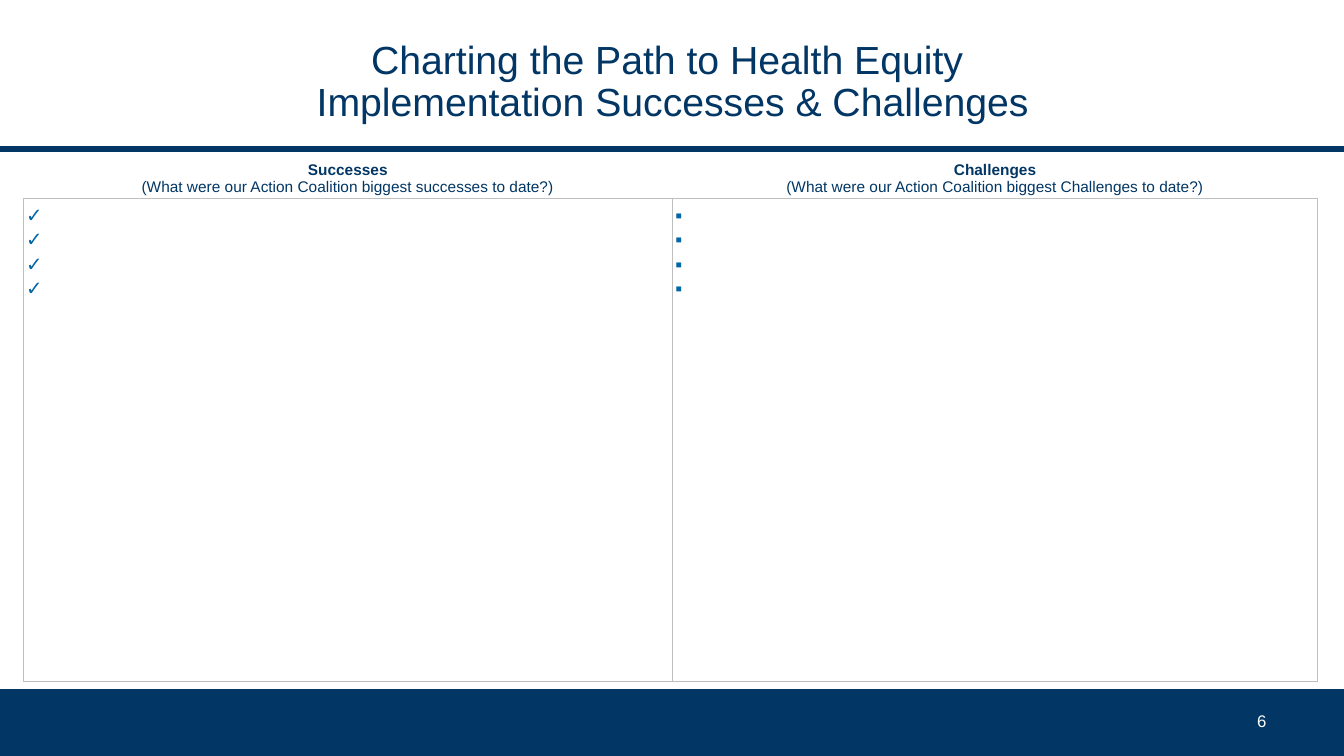
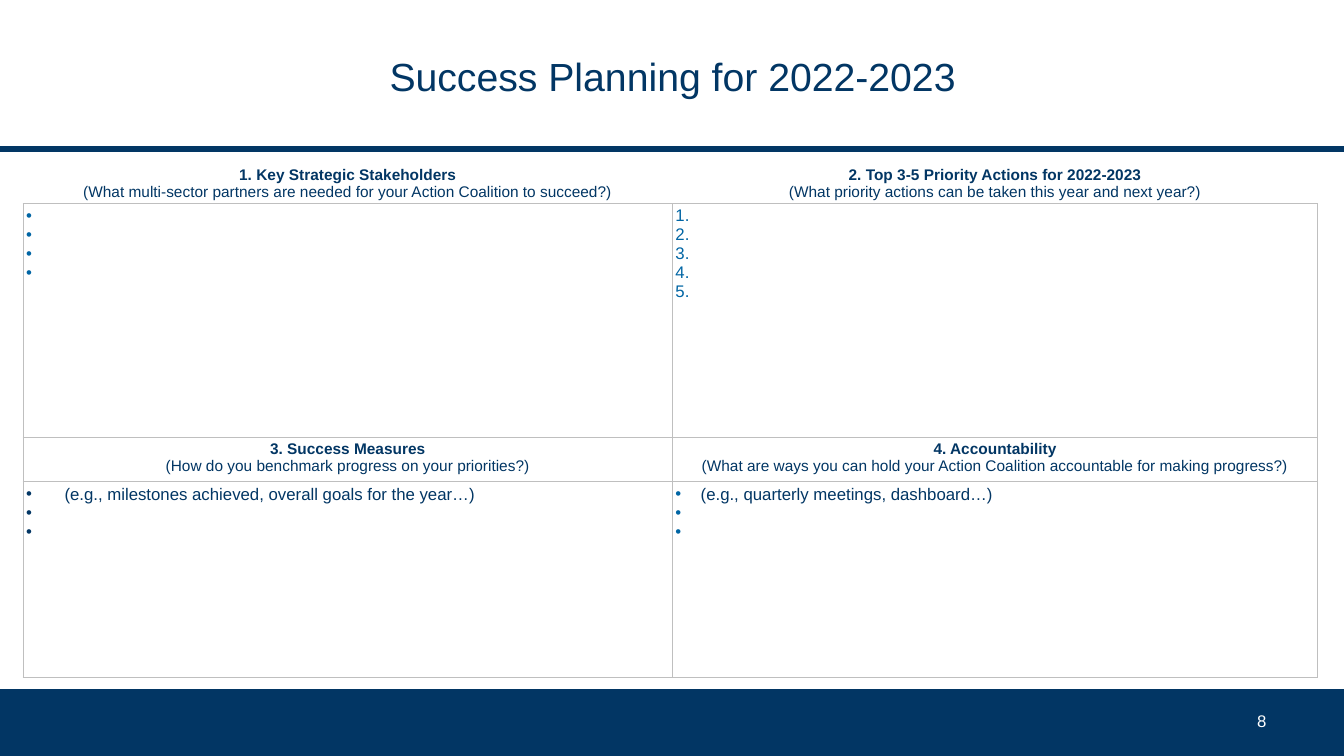
from lxml.etree import SubElement
from pptx import Presentation
from pptx.dml.color import RGBColor
from pptx.enum.shapes import MSO_SHAPE
from pptx.enum.text import MSO_ANCHOR, PP_ALIGN
from pptx.oxml.ns import qn
from pptx.util import Inches, Pt

NAVY = RGBColor(0x02, 0x36, 0x64)
BLUE = RGBColor(0x00, 0x65, 0xA4)
GRAY = RGBColor(0xBF, 0xBF, 0xBF)
WHITE = RGBColor(0xFF, 0xFF, 0xFF)
FONT = "Arial"
WIDTH, HEIGHT = 13.33, 7.5
COLUMNS = (6.44, 6.4)
BLANK = " "  # an entry still to be filled in


class Deck:
    def __init__(self):
        self.prs = Presentation()
        self.prs.slide_width = Inches(WIDTH)
        self.prs.slide_height = Inches(HEIGHT)
        self.s = None

    def slide(self, title, title_top, number):
        self.s = self.prs.slides.add_slide(self.prs.slide_layouts[6])
        self.band(6.84, 0.66)
        self.band(1.46, 0.04)
        self.text(title, 1.9, title_top, 9.54, 1.33, 28, NAVY, PP_ALIGN.CENTER, 0.9)
        self.text(number, 9.55, 6.95, 3.11, 0.4, 12, WHITE, PP_ALIGN.RIGHT)

    def band(self, top, height):
        sp = self.s.shapes.add_shape(MSO_SHAPE.RECTANGLE, 0, Inches(top),
                                     Inches(WIDTH), Inches(height))
        sp.shadow.inherit = False
        sp.fill.solid()
        sp.fill.fore_color.rgb = NAVY
        sp.line.color.rgb = NAVY
        sp.line.width = Pt(1)

    def font(self, p, size, color, bold=False):
        for r in p.runs:
            r.font.name = FONT
            r.font.size = Pt(size)
            r.font.bold = bold
            r.font.color.rgb = color

    def text(self, text, left, top, width, height, size, color, align, spacing=1.0):
        box = self.s.shapes.add_textbox(Inches(left), Inches(top),
                                        Inches(width), Inches(height))
        tf = box.text_frame
        tf.word_wrap = True
        tf.vertical_anchor = MSO_ANCHOR.MIDDLE
        tf.text = text
        p = tf.paragraphs[0]
        p.alignment = align
        p.line_spacing = spacing
        self.font(p, size, color)

    def table(self, top, row_heights):
        shape = self.s.shapes.add_table(len(row_heights), len(COLUMNS),
                                        Inches(0.23), Inches(top),
                                        Inches(sum(COLUMNS)), Inches(sum(row_heights)))
        table = shape.table
        table.first_row = table.horz_banding = False
        for column, width in zip(table.columns, COLUMNS):
            column.width = Inches(width)
        for i, (row, height) in enumerate(zip(table.rows, row_heights)):
            row.height = Inches(height)
            for j, cell in enumerate(row.cells):
                cell.margin_left = cell.margin_right = Inches(0.03)
                cell.margin_top = cell.margin_bottom = Inches(0.03)
                # The top row carries only its bottom border
                self.borders(cell, {"B": 1} if i == 0 else
                             {"L": 0.5 if j else 1, "R": 0.5, "T": 1, "B": 1})
                cell.fill.background()
        return table

    def borders(self, cell, widths):
        tcPr = cell._tc.get_or_add_tcPr()
        for side, width in widths.items():
            ln = SubElement(tcPr, qn(f"a:ln{side}"), w=str(Pt(width)))
            fill = SubElement(ln, qn("a:solidFill"))
            SubElement(fill, qn("a:srgbClr"), val=str(GRAY))

    def heading(self, cell, title, question, anchor=MSO_ANCHOR.BOTTOM):
        cell.vertical_anchor = anchor
        cell.text = f"{title}\n{question}"
        for p, bold in zip(cell.text_frame.paragraphs, (True, False)):
            p.alignment = PP_ALIGN.CENTER
            self.font(p, 11, NAVY, bold)

    def bullets(self, cell, items, char="•", indent=0.25, color=BLUE,
                size=12, spacing=1.0):
        """Fill a cell with a list; without a char the list is numbered."""
        cell.text = "\n".join(items)
        for p in cell.text_frame.paragraphs:
            p.line_spacing = spacing
            pPr = p._p.get_or_add_pPr()
            pPr.set("marL", str(Inches(indent)))
            pPr.set("indent", str(-Inches(indent)))
            bu_color = SubElement(pPr, qn("a:buClr"))
            SubElement(bu_color, qn("a:srgbClr"), val=str(color))
            SubElement(pPr, qn("a:buFont"), typeface=FONT)
            if char:
                SubElement(pPr, qn("a:buChar"), char=char)
            else:
                SubElement(pPr, qn("a:buAutoNum"), type="arabicPeriod")
            self.font(p, size, NAVY)


def main():
    deck = Deck()

    # Successes and challenges
    deck.slide("Charting the Path to Health Equity \v"
               "Implementation Successes & Challenges", 0.16, "6")
    table = deck.table(1.54, (0.43, 4.79))
    reviews = (
        ("Successes", "(What were our Action Coalition biggest successes to date?)", "✓"),
        ("Challenges", "(What were our Action Coalition biggest Challenges to date?)", "▪"),
    )
    for j, (title, question, mark) in enumerate(reviews):
        deck.heading(table.cell(0, j), title, question)
        deck.bullets(table.cell(1, j), [BLANK] * 4, mark, size=14, spacing=1.12)

    # Success planning
    deck.slide("Success Planning for 2022-2023", 0.12, "8")
    table = deck.table(1.57, (0.45, 2.32, 0.44, 1.94))
    deck.heading(table.cell(0, 0), "1. Key Strategic Stakeholders",
                 "(What multi-sector partners are needed for your Action Coalition to succeed?)")
    deck.heading(table.cell(0, 1), "2. Top 3-5 Priority Actions for 2022-2023",
                 "(What priority actions can be taken this year and next year?)")
    deck.bullets(table.cell(1, 0), [BLANK] * 4)
    deck.bullets(table.cell(1, 1), [BLANK] * 5, char=None)
    deck.heading(table.cell(2, 0), "3. Success Measures",
                 "(How do you benchmark progress on your priorities?)", MSO_ANCHOR.TOP)
    deck.heading(table.cell(2, 1), "4. Accountability",
                 "(What are ways you can hold your Action Coalition accountable "
                 "for making progress?)", MSO_ANCHOR.TOP)
    deck.bullets(table.cell(3, 0),
                 ["(e.g., milestones achieved, overall goals for the year…)", BLANK, BLANK],
                 indent=0.38, color=NAVY)
    deck.bullets(table.cell(3, 1),
                 ["(e.g., quarterly meetings, dashboard…)", BLANK, BLANK])

    deck.prs.save("out.pptx")


if __name__ == "__main__":
    main()
